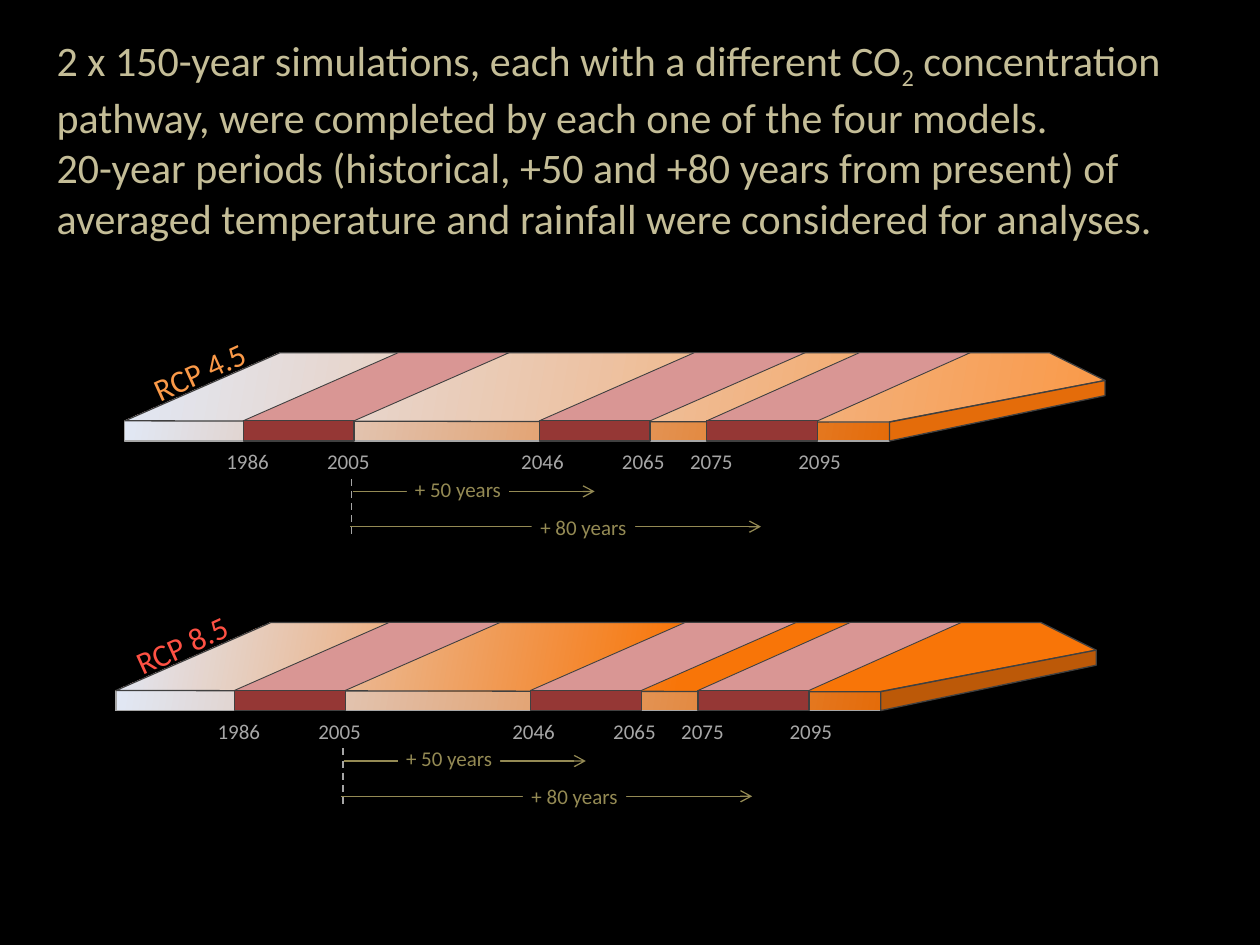
import pptx
import pptx.dml.color
import pptx.enum.dml
import pptx.enum.shapes
import pptx.enum.text
import pptx.oxml.xmlchemy
import pptx.util
from dataclasses import dataclass

Inches, Pt = pptx.util.Inches, pptx.util.Pt
RECT = pptx.enum.shapes.MSO_SHAPE.RECTANGLE
ALIGN = pptx.enum.text.PP_ALIGN
AUTO = pptx.enum.text.MSO_AUTO_SIZE
LIGHT, GREY, EDGE, OLIVE = "E1E8F5", "A6A6A6", "404040", "948A54"
FRONT_Y, BACK_Y, FRONT_H = 3.34, 2.8, 0.16
PERIOD_W = 0.88


@dataclass
class Period:
    x: float  # left end on the front edge
    shear: float  # shift of the back edge
    years: tuple[tuple[str, float], ...]  # year and left of its label


@dataclass
class Offset:
    name: str
    box: tuple[float, float, float]  # label left, top, width
    start: float
    end: float
    y: float


@dataclass
class Scenario:
    name: str
    color: str
    label_at: tuple[float, float]
    dx: float
    dy: float
    top_fill: str
    top_stop: float
    side_fill: str


PERIODS = [
    Period(1.93, 1.23, (("1986", 1.66), ("2005", 2.46))),
    Period(4.28, 1.23, (("2046", 4.0), ("2065", 4.8))),
    Period(5.61, 1.21, (("2075", 5.34), ("2095", 6.2))),
]
OFFSETS = [
    Offset("+ 50 years", (3.23, 3.74, 0.81), 2.8, 4.72, 3.9),
    Offset("+ 80 years", (4.22, 4.04, 0.82), 2.78, 6.04, 4.18),
]
SCENARIOS = [
    Scenario("RCP 4.5", "FA9948", (1.09, 2.71), 0, 0, "FA9948", 0, "E46C0A"),
    Scenario("RCP 8.5", "FE5144", (0.95, 4.88), -0.07, 2.14, "F87508", 0.42, "BC5908"),
]


def rgb(value: str):
    return pptx.dml.color.RGBColor.from_string(value)


def set_text(sp, paragraphs, *, size: float, color: str, align=ALIGN.LEFT, inset=None):
    """Each paragraph is a list of (text, baseline) runs."""
    tf = sp.text_frame
    tf.word_wrap = True
    tf.auto_size = AUTO.NONE
    if inset is not None:
        tf.margin_left = tf.margin_right = tf.margin_top = tf.margin_bottom = Inches(inset)
    for i, runs in enumerate(paragraphs):
        p = tf.paragraphs[0] if i == 0 else tf.add_paragraph()
        p.alignment = align
        for text, baseline in runs:
            r = p.add_run()
            r.text = text
            r.font.name, r.font.size = "Calibri", Pt(size)
            r.font.color.rgb = rgb(color)
            if baseline:
                r.font._element.set("baseline", str(baseline * 1000))


def style(sp, fill: str, line: str | None = None, width: float = 0.75,
          fade: bool = False, stop: float = 0):
    """Plain fill, or a fade from fill on the right to LIGHT on the left."""
    sp.shadow.inherit = False
    if fade:
        sp.fill.gradient()
        sp.fill.gradient_angle = 170
        first, last = sp.fill.gradient_stops
        first.color.rgb, first.position = rgb(fill), stop
        last.color.rgb, last.position = rgb(LIGHT), 1
    else:
        sp.fill.solid()
        sp.fill.fore_color.rgb = rgb(fill)
    if line:
        sp.line.color.rgb = rgb(line)
        sp.line.width = Pt(width)
    else:
        sp.line.fill.background()


def add_rect(shapes, x: float, y: float, w: float, h: float, fill: str, **fmt):
    sp = shapes.add_shape(RECT, Inches(x), Inches(y), Inches(w), Inches(h))
    style(sp, fill, **fmt)
    return sp


def add_polygon(shapes, points, s: Scenario, fill: str, **fmt):
    first, *rest = [(Inches(x + s.dx), Inches(y + s.dy)) for x, y in points]
    builder = shapes.build_freeform(*first, scale=1.0)
    builder.add_line_segments(rest, close=True)
    style(builder.convert_to_shape(), fill, **fmt)


def add_label(shapes, text: str, x: float, y: float, w: float, h: float, **fmt):
    sp = shapes.add_textbox(Inches(x), Inches(y), Inches(w), Inches(h))
    set_text(sp, [[(text, 0)]], **fmt)
    return sp


def add_line(shapes, x1: float, y1: float, x2: float, y2: float, color: str,
             width: float, arrow: bool = False):
    cx = shapes.add_connector(pptx.enum.shapes.MSO_CONNECTOR.STRAIGHT,
                              Inches(x1), Inches(y1), Inches(x2), Inches(y2))
    cx.line.color.rgb = rgb(color)
    cx.line.width = Pt(width)
    if arrow:
        tail = pptx.oxml.xmlchemy.OxmlElement("a:tailEnd")
        tail.set("type", "arrow")
        cx.line._get_or_add_ln().append(tail)
    else:
        cx.line.dash_style = pptx.enum.dml.MSO_LINE.DASH
    cx._element.spPr.append(pptx.oxml.xmlchemy.OxmlElement("a:effectLst"))


def draw_scenario(shapes, s: Scenario):
    dx, dy = s.dx, s.dy
    # Bar: front, top and right side
    add_rect(shapes, 0.99 + dx, FRONT_Y + dy, 6.07, FRONT_H, "E46C0A", line=GREY, fade=True)
    add_polygon(shapes, [(0.99, FRONT_Y), (2.22, BACK_Y), (8.33, BACK_Y), (8.77, 3.02),
                         (7.05, 3.35)],
                s, s.top_fill, line=EDGE, fade=True, stop=s.top_stop)
    add_polygon(shapes, [(7.06, 3.5), (8.77, 3.14), (8.77, 3.02), (7.06, 3.35)],
                s, s.side_fill, line=EDGE)

    # Twenty-year periods with their years
    for period in PERIODS:
        x, back = period.x, period.x + period.shear
        add_polygon(shapes, [(x, FRONT_Y), (back, BACK_Y), (back + PERIOD_W, BACK_Y),
                             (x + PERIOD_W, FRONT_Y)],
                    s, "D99694", line=EDGE, width=0.5)
        add_rect(shapes, x + dx, FRONT_Y + dy, PERIOD_W, FRONT_H, "953735", line=EDGE)
        for year, left in period.years:
            add_label(shapes, year, left + dx, 3.51 + dy, 0.61, 0.3,
                      size=12, color=GREY, align=ALIGN.CENTER)

    # Offsets from the present
    add_line(shapes, 2.79 + dx, 3.8 + dy, 2.79 + dx, 4.26 + dy, GREY, 1)
    for o in OFFSETS:
        add_line(shapes, o.start + dx, o.y + dy, o.end + dx, o.y + dy, OLIVE, 0.75, arrow=True)
        left, top, width = o.box
        sp = add_rect(shapes, left + dx, top + dy, width, 0.28, "000000")
        set_text(sp, [[(o.name, 0)]], size=12, color=OLIVE, align=ALIGN.CENTER, inset=0.04)

    # Pathway name along the slanted edge
    sp = add_label(shapes, s.name, *s.label_at, 1.14, 0.4, size=18, color=s.color)
    sp.rotation = 335.6


def main():
    prs = pptx.Presentation()
    prs.slide_width, prs.slide_height = Inches(10), Inches(7.5)
    slide = prs.slides.add_slide(prs.slide_layouts[5])
    slide.background.fill.solid()
    slide.background.fill.fore_color.rgb = rgb("000000")

    # Title
    title = slide.shapes.title
    title.left, title.top = Inches(0.35), Inches(0.22)
    title.width, title.height = Inches(9.16), Inches(1.72)
    title.text_frame.vertical_anchor = pptx.enum.text.MSO_ANCHOR.TOP
    set_text(title, [
        [("2 x 150-year simulations, each with a different CO", 0), ("2", -25),
         (" concentration pathway, were completed by each one of the four models.", 0)],
        [("20-year periods (historical, +50 and +80 years from present) of averaged "
          "temperature and rainfall were considered for analyses.", 0)],
    ], size=24, color="C4BD97")

    for s in SCENARIOS:
        draw_scenario(slide.shapes, s)
    prs.save("out.pptx")


if __name__ == "__main__":
    main()
